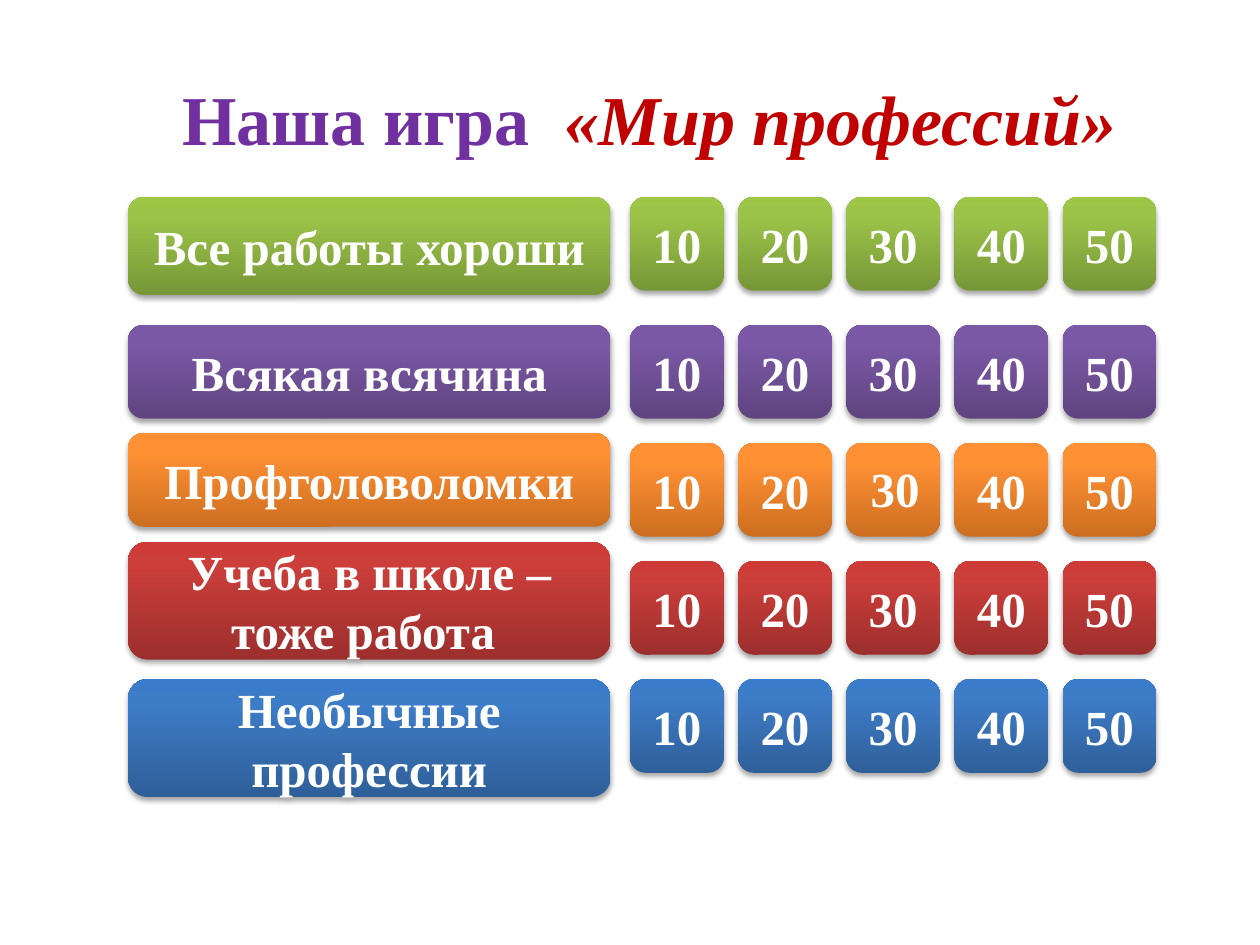
from copy import deepcopy
from dataclasses import dataclass

from lxml import etree
from pptx import Presentation
from pptx.dml.color import RGBColor
from pptx.enum.shapes import MSO_SHAPE
from pptx.enum.text import MSO_ANCHOR, PP_ALIGN
from pptx.oxml import parse_xml
from pptx.oxml.ns import nsdecls, qn
from pptx.util import Cm, Pt

ROUND = MSO_SHAPE.ROUNDED_RECTANGLE
MIDDLE = MSO_ANCHOR.MIDDLE
TOP = MSO_ANCHOR.TOP
CENTER = PP_ALIGN.CENTER


@dataclass(frozen=True)
class Theme:
    font: str = "Times New Roman"
    head: int = 40
    body: int = 28
    white: str = "FFFFFF"
    black: str = "000000"
    plum: str = "7030A0"
    red: str = "C00000"
    stops: tuple = (0, 0.8, 1)


THEME = Theme()
POINTS = ("10", "20", "30", "40", "50")
TILE, PITCH, SHIFT = 1.89, 2.18, 10.12
LEFT, WIDTH = 2.58, 9.73

ROWS = (
    ("Все работы хороши", ("779737", "9BC348", "9DC746"), 3.97, 3.97, 1.98),
    ("Всякая всячина", ("5F4480", "7B58A6", "7C57A8"), 6.55, 6.55, TILE),
    ("Профголоволомки", ("CC6E20", "FF9034", "FF9136"), 8.93, 8.73, TILE),
    ("Учеба в школе – тоже работа ", ("9C2F2D", "CB3E3A", "CE3B37"), 11.31, 10.92, 2.38),
    ("Необычные профессии", ("2F5F99", "3D7CC7", "3A7CCB"), 13.69, 13.69, 2.38),
)


def assign(item, values):
    for name, value in values.items():
        setattr(item, name, value)


def shade(blur, drop, turn, alpha):
    node = etree.Element(qn("a:outerShdw"), blurRad=str(Pt(blur)), dist=str(Pt(drop)),
                         dir=str(turn * 60000), rotWithShape="0")
    color = etree.SubElement(node, qn("a:srgbClr"), val=THEME.black)
    etree.SubElement(color, qn("a:alpha"), val=str(alpha * 1000))
    return node


def write(shape, parts, size, anchor):
    frame = shape.text_frame
    assign(frame, {"word_wrap": True, "vertical_anchor": anchor})
    line = frame.paragraphs[0]
    line.alignment = CENTER
    for text, color, slant in parts:
        run = line.add_run()
        run.text = text
        assign(run.font, {"name": THEME.font, "size": Pt(size), "bold": True, "italic": slant})
        run.font.color.rgb = RGBColor.from_string(color)
    return line.runs


def label(slide, box, parts, size):
    shape = slide.shapes.add_textbox(*map(Cm, box))
    return write(shape, parts, size, TOP)


def block(slide, box, text, colors):
    shape = slide.shapes.add_shape(ROUND, *map(Cm, box))
    shape.line.fill.background()
    shape.fill.gradient()
    shape.fill.gradient_angle = 90
    props = shape.fill._xPr
    ramp = props.find(".//" + qn("a:gsLst"))
    ramp.append(deepcopy(ramp[0]))
    for stop, place, color in zip(shape.fill.gradient_stops, THEME.stops, colors):
        stop.position = place
        stop.color.rgb = RGBColor.from_string(color)
    shape.shadow.inherit = False
    props.find(qn("a:effectLst")).append(shade(3.1, 1.8, 90, 35))
    if text:
        write(shape, [(text, THEME.white, None)], THEME.body, MIDDLE)


def title(slide, box):
    parts = [("Наша игра  ", THEME.plum, None), ("«Мир профессий»", THEME.red, True)]
    for run in label(slide, box, parts, THEME.head):
        props = run.font._rPr
        props.insert(0, parse_xml(
            f'<a:ln {nsdecls("a")} w="{Pt(1.45)}"><a:solidFill>'
            f'<a:srgbClr val="{THEME.white}"/></a:solidFill></a:ln>'))
        glow = etree.Element(qn("a:effectLst"))
        glow.append(shade(3, 3, 60, 50))
        props.insert(2, glow)


def tiles(slide, left, top, colors, blank):
    for step, text in enumerate(POINTS):
        box = (left + step * PITCH, top, TILE, TILE)
        block(slide, box, None if step == blank else text, colors)
        if step == blank:
            spot = (box[0] + 0.2, top + 0.19, 1.57, 1.45)
            label(slide, spot, [(text, THEME.white, None)], THEME.body)


def board(slide, left, width):
    for row, (name, colors, top, start, height) in enumerate(ROWS):
        block(slide, (left, start, width, height), name, colors)
        tiles(slide, left + SHIFT, top, colors, 2 if row == 2 else None)


def main():
    deck = Presentation()
    assign(deck, {"slide_width": Cm(25.4), "slide_height": Cm(19.05)})
    slide = deck.slides.add_slide(deck.slide_layouts[6])
    title(slide, (2.18, 1.4, 21.82, 1.96))
    board(slide, LEFT, WIDTH)
    deck.save("out.pptx")


if __name__ == "__main__":
    main()
